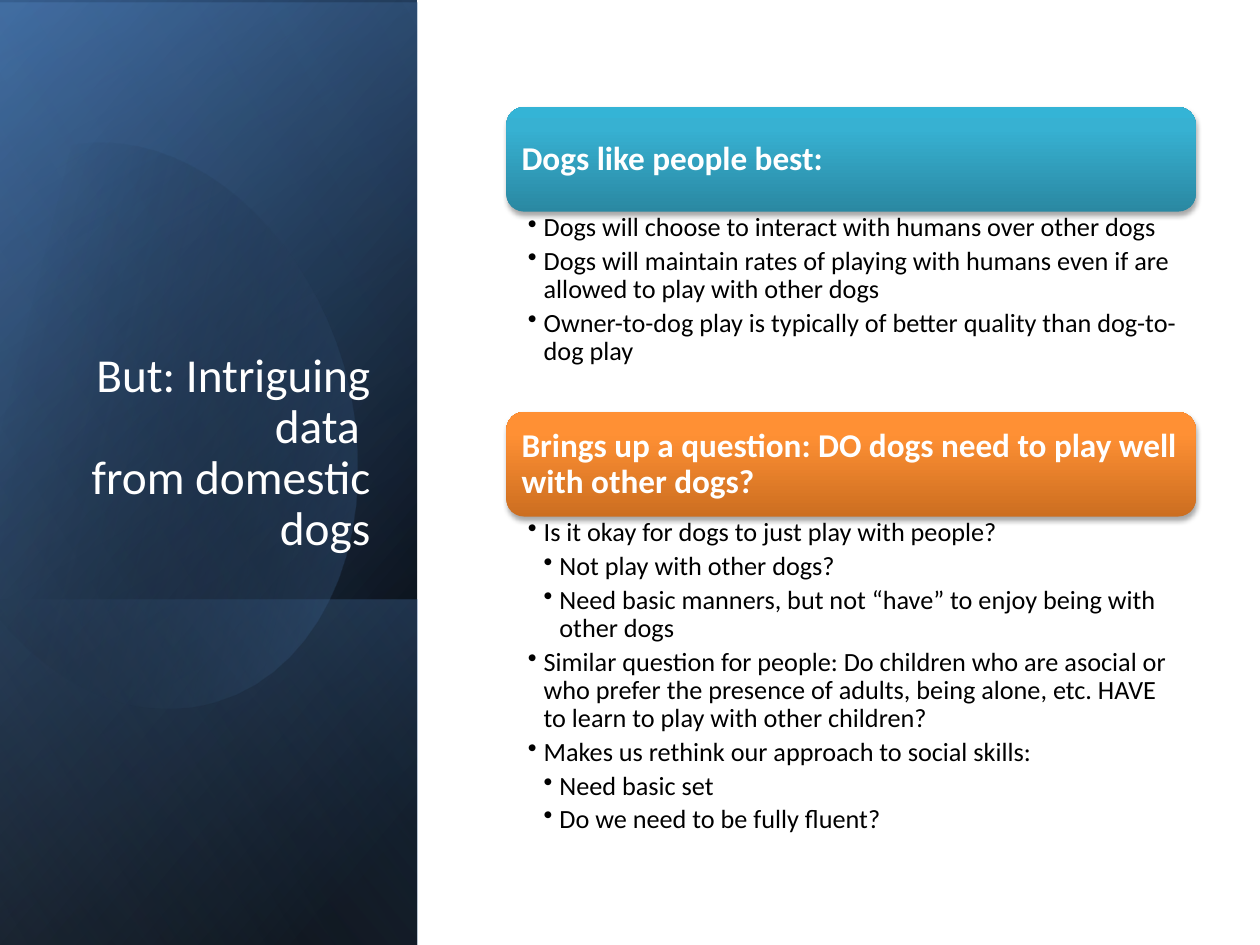
from dataclasses import dataclass
from math import cos, radians, sin

from lxml import etree
from pptx import Presentation
from pptx import util as u
from pptx.dml.color import RGBColor
from pptx.enum import shapes, text
from pptx.oxml.ns import qn


@dataclass(frozen=True)
class Theme:
    font: str = "Calibri"
    white: str = "FFFFFF"
    black: str = "000000"
    navy: str = "376092"
    blue: str = "4F81BD"
    pale_blue: str = "95B3D7"
    teal: tuple = ("2A88A2", "37B1D2", "34B4D6")
    orange: tuple = ("CC6E20", "FF9034", "FF9136")
    title_size: int = 27
    heading_size: int = 19
    body_size: int = 15


@dataclass(frozen=True)
class Gradient:
    stops: tuple  # (position %, colour, opacity %)
    angle: int


@dataclass(frozen=True)
class Panel:
    top: float
    height: float
    gradient: Gradient


@dataclass(frozen=True)
class Section:
    top: float
    body_height: float
    colors: tuple
    heading: str
    bullets: tuple  # (level, wording)


THEME = Theme()
PANEL_WIDTH = 3.31
SECTION_LEFT, SECTION_WIDTH, HEADING_HEIGHT = 4.02, 5.47, 0.83
HEADING_INSET = 0.04

PANELS = (
    Panel(0, 7.5, Gradient(((8, THEME.black, 100), (100, THEME.navy, 100)), 50)),
    Panel(0.02, 7.5, Gradient(((0, THEME.black, 0), (99, THEME.blue, 46)), 30)),
    Panel(4.76, 2.74, Gradient(((2, THEME.blue, 29), (100, THEME.black, 30)), 130)),
)
TOP_PANEL = Panel(0, 7.5, Gradient(((0, THEME.black, 0), (99, THEME.pale_blue, 11)), 120))

# Egg outline as cubic curves: two control points and an end point each
EGG_START = (0.96, 1.14)
EGG_CURVES = (
    ((1.71, 1.22), (2.44, 1.92), (2.73, 2.9)),
    ((3.07, 4.12), (2.62, 5.31), (1.71, 5.57)),
    ((1.14, 5.74), (0.53, 5.5), (0.07, 5)),
    ((0.04, 4.96), (0, 4.92), (-0.03, 4.88)),
    ((-0.1, 3.81), (-0.18, 2.73), (-0.25, 1.66)),
    ((-0.22, 1.62), (-0.18, 1.58), (-0.15, 1.54)),
    ((0.02, 1.37), (0.22, 1.25), (0.45, 1.18)),
    ((0.62, 1.13), (0.79, 1.12), EGG_START),
)
EGG_CENTER, EGG_TILT = (1.19, 3.34), 16.1
EGG_GRADIENT = Gradient(((29, THEME.black, 0), (100, THEME.blue, 43)), 30)

SECTIONS = (
    Section(0.85, 1.59, THEME.teal, "Dogs like people best:", (
        (1, "Dogs will choose to interact with humans over other dogs"),
        (1, "Dogs will maintain rates of playing with humans even if are allowed to play with other dogs"),
        (1, "Owner-to-dog play is typically of better quality than dog-to-dog play"),
    )),
    Section(3.27, 2.67, THEME.orange,
            "Brings up a question: DO dogs need to play well with other dogs?", (
        (1, "Is it okay for dogs to just play with people?"),
        (2, "Not play with other dogs?"),
        (2, "Need basic manners, but not “have” to enjoy being with other dogs"),
        (1, "Similar question for people: Do children who are asocial or who prefer the presence "
            "of adults, being alone, etc. HAVE to learn to play with other children?"),
        (1, "Makes us rethink our approach to social skills:"),
        (2, "Need basic set"),
        (2, "Do we need to be fully fluent?"),
    )),
)


def add_color(parent, color: str, opacity: int) -> None:
    element = etree.SubElement(parent, qn("a:srgbClr"), val=color)
    if opacity < 100:
        etree.SubElement(element, qn("a:alpha"), val=str(opacity * 1000))


def paint(shape, gradient: Gradient) -> None:
    """Fill with a gradient, with no line and no shadow."""
    shape.fill.gradient()
    fill = shape.element.spPr.find(qn("a:gradFill"))
    stop_list = fill.find(qn("a:gsLst"))
    for stop in list(stop_list):
        stop_list.remove(stop)
    for position, color, opacity in gradient.stops:
        stop = etree.SubElement(stop_list, qn("a:gs"), pos=str(position * 1000))
        add_color(stop, color, opacity)
    direction = fill.find(qn("a:lin"))
    direction.set("ang", str(gradient.angle * 60000))
    direction.set("scaled", "0")
    shape.line.fill.background()
    shape.shadow.inherit = False


def add_panel(slide, panel: Panel) -> None:
    """Draw a left-edge panel lying on its side, then turned upright."""
    left = (PANEL_WIDTH - panel.height) / 2
    top = panel.top + (panel.height - PANEL_WIDTH) / 2
    shape = slide.shapes.add_shape(
        shapes.MSO_SHAPE.RECTANGLE, u.Inches(left), u.Inches(top),
        u.Inches(panel.height), u.Inches(PANEL_WIDTH))
    shape.rotation = 90
    shape.element.spPr.find(qn("a:xfrm")).set("flipH", "1")
    paint(shape, panel.gradient)


def egg_points(steps: int = 16) -> list:
    points, start = [EGG_START], EGG_START
    for first, second, end in EGG_CURVES:
        for step in range(1, steps + 1):
            t = step / steps
            weights = ((1 - t) ** 3, 3 * t * (1 - t) ** 2, 3 * t * t * (1 - t), t ** 3)
            corners = (start, first, second, end)
            points.append(tuple(sum(w * c[axis] for w, c in zip(weights, corners))
                                for axis in (0, 1)))
        start = end
    return points


def add_egg(slide) -> None:
    """Build the outline upright, then tilt the finished shape."""
    c, s = cos(radians(EGG_TILT)), sin(radians(EGG_TILT))
    center_x, center_y = EGG_CENTER
    upright = [(u.Inches(center_x + (x - center_x) * c - (y - center_y) * s),
                u.Inches(center_y + (x - center_x) * s + (y - center_y) * c))
               for x, y in egg_points()]
    builder = slide.shapes.build_freeform(*upright[0], scale=1.0)
    builder.add_line_segments(upright[1:], close=True)
    shape = builder.convert_to_shape()
    shape.rotation = 360 - EGG_TILT
    paint(shape, EGG_GRADIENT)


def add_run(paragraph, wording: str, size: int, color: str, bold: bool = False) -> None:
    run = paragraph.add_run()
    run.text = wording
    run.font.name, run.font.size, run.font.bold = THEME.font, u.Pt(size), bold
    run.font.color.rgb = RGBColor.from_string(color)


def add_text_frame(slide, left: float, top: float, width: float, height: float, insets: tuple):
    box = slide.shapes.add_textbox(*map(u.Inches, (left, top, width, height)))
    frame = box.text_frame
    frame.word_wrap = True
    frame.margin_left, frame.margin_top, frame.margin_right, frame.margin_bottom = map(u.Inches, insets)
    return frame


def add_section(slide, section: Section) -> None:
    # Heading bar with a soft shadow
    bar = slide.shapes.add_shape(
        shapes.MSO_SHAPE.ROUNDED_RECTANGLE,
        *map(u.Inches, (SECTION_LEFT, section.top, SECTION_WIDTH, HEADING_HEIGHT)))
    paint(bar, Gradient(tuple((p, c, 100) for p, c in zip((0, 80, 100), section.colors)), 270))
    shadow = etree.SubElement(
        bar.element.spPr.find(qn("a:effectLst")), qn("a:outerShdw"), blurRad=str(u.Pt(3.1)),
        dist=str(u.Pt(1.8)), dir=str(90 * 60000), rotWithShape="0")
    add_color(shadow, THEME.black, 35)

    # Heading text
    frame = add_text_frame(
        slide, SECTION_LEFT + HEADING_INSET, section.top + HEADING_INSET,
        SECTION_WIDTH - 2 * HEADING_INSET, HEADING_HEIGHT - 2 * HEADING_INSET, (0.08,) * 4)
    frame.vertical_anchor = text.MSO_ANCHOR.MIDDLE
    frame.paragraphs[0].line_spacing = 0.9
    add_run(frame.paragraphs[0], section.heading, THEME.heading_size, THEME.white, True)

    # Bulleted text
    frame = add_text_frame(slide, SECTION_LEFT, section.top + HEADING_HEIGHT - 0.01,
                           SECTION_WIDTH, section.body_height, (0.17, 0.03, 0.15, 0.03))
    for index, (level, wording) in enumerate(section.bullets):
        paragraph = frame.add_paragraph() if index else frame.paragraphs[0]
        paragraph.level = level
        paragraph.line_spacing = 0.9
        paragraph.space_after = u.Pt(0.2 * THEME.body_size)
        properties = paragraph._p.get_or_add_pPr()
        properties.set("marL", str(u.Inches(0.125 * level)))
        properties.set("indent", str(-u.Inches(0.125)))
        etree.SubElement(properties, qn("a:buChar"), char="•")
        add_run(paragraph, wording, THEME.body_size, THEME.black)


def place_title(slide, lines: tuple) -> None:
    title = slide.shapes.title
    title.left, title.top, title.width, title.height = map(u.Inches, (0.48, 1.84, 2.56, 2.62))
    slide.shapes._spTree.append(title.element)  # bring in front of the panels
    frame = title.text_frame
    frame.word_wrap = True
    frame.auto_size = text.MSO_AUTO_SIZE.NONE
    frame.vertical_anchor = text.MSO_ANCHOR.BOTTOM
    paragraph = frame.paragraphs[0]
    paragraph.alignment = text.PP_ALIGN.RIGHT
    paragraph.line_spacing = 0.9
    for index, line in enumerate(lines):
        if index:
            paragraph.add_line_break()
        add_run(paragraph, line, THEME.title_size, THEME.white)


def main() -> None:
    presentation = Presentation()
    presentation.slide_width, presentation.slide_height = u.Inches(10), u.Inches(7.5)
    slide = presentation.slides.add_slide(presentation.slide_layouts[5])
    for panel in PANELS:
        add_panel(slide, panel)
    add_egg(slide)
    add_panel(slide, TOP_PANEL)
    place_title(slide, ("But: Intriguing data ", "from domestic dogs"))
    for section in SECTIONS:
        add_section(slide, section)
    presentation.save("out.pptx")


if __name__ == "__main__":
    main()
